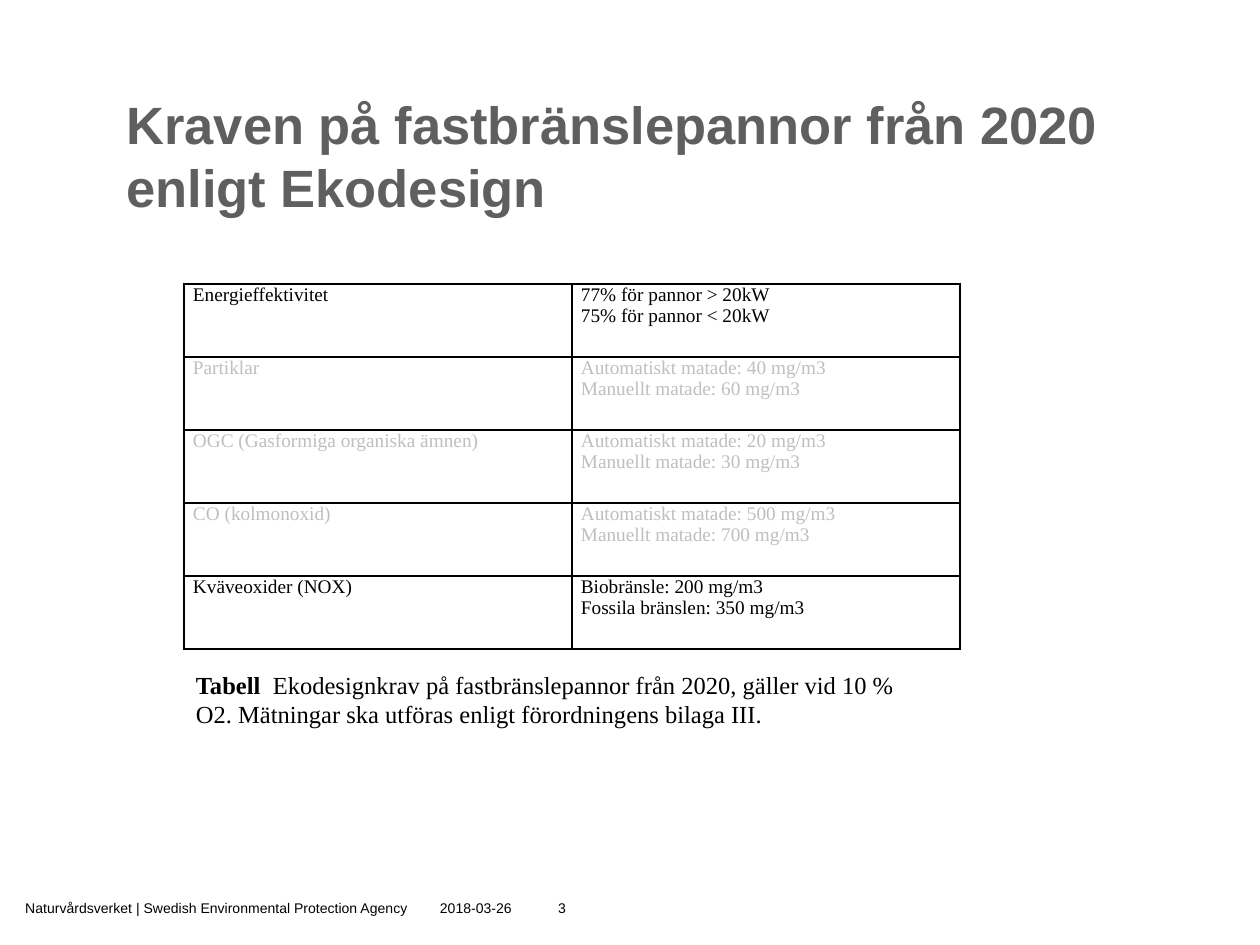
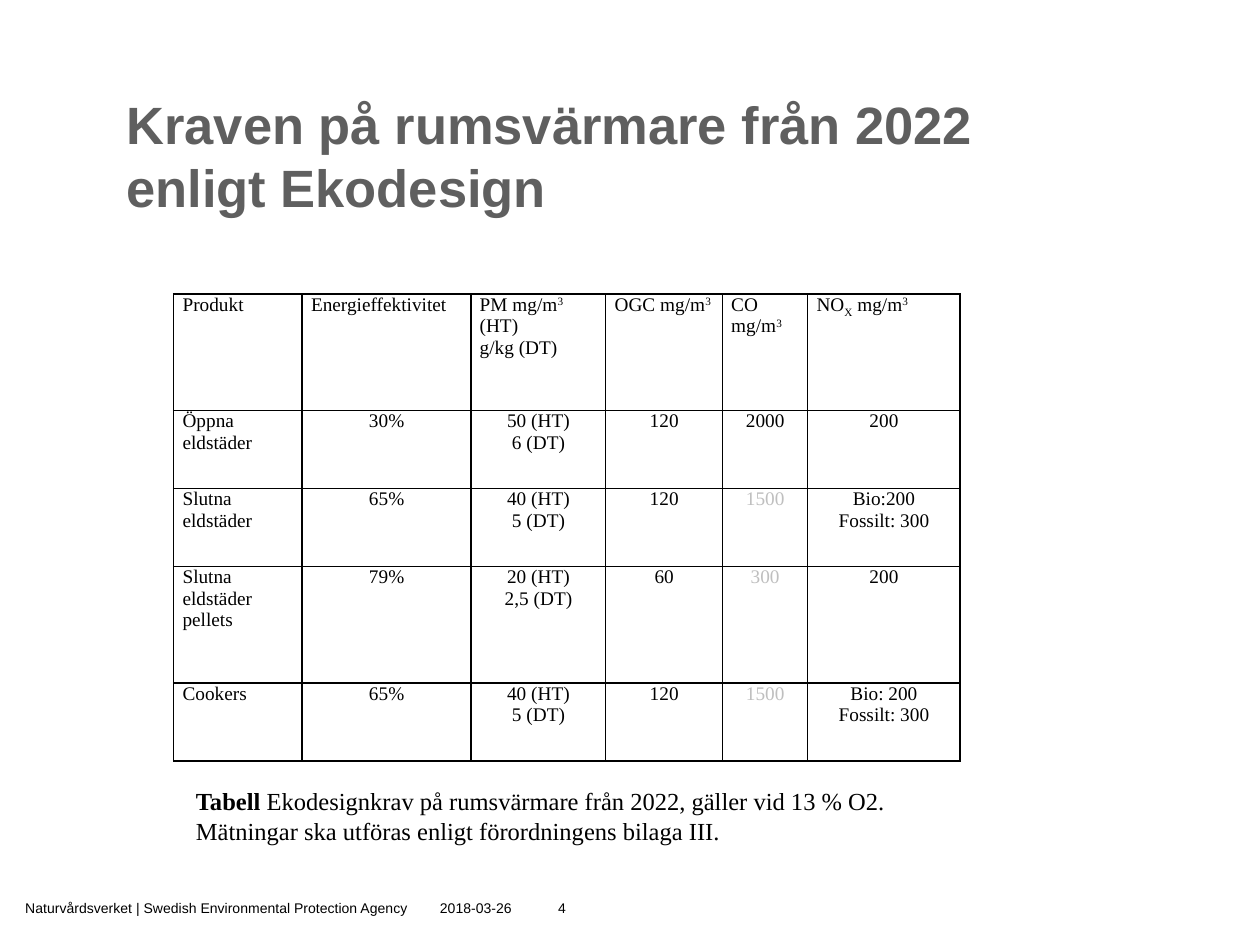
from lxml import etree
from pptx import Presentation
from pptx.dml.color import RGBColor
from pptx.enum.text import MSO_ANCHOR, PP_ALIGN
from pptx.oxml.ns import qn
from pptx.util import Cm, Pt

LEFT, CENTER, RIGHT = PP_ALIGN.LEFT, PP_ALIGN.CENTER, PP_ALIGN.RIGHT
TOP, MIDDLE = MSO_ANCHOR.TOP, MSO_ANCHOR.MIDDLE
BLANK_LAYOUT = 6
COLOURS = {"title": "5F5F5F", "text": "000000", "muted": "BFBFBF", "border": "000000"}
FORMATS = {
    "title": {"name": "Arial", "size": Pt(30), "bold": True},
    "footer": {"name": "Arial", "size": Pt(8), "bold": False},
    "caption": {"name": "Times New Roman", "size": Pt(14), "bold": False},
    "cell": {"name": "Times New Roman", "size": Pt(11), "bold": False},
}
BASELINES = {"^": "30000", "_": "-25000"}
BOLD_MARK = "*"
BORDER_SIDES = ("a:lnL", "a:lnR", "a:lnT", "a:lnB")
CELL_MARGINS = {"margin_left": Cm(0.18), "margin_right": Cm(0.17), "margin_top": 0, "margin_bottom": 0}

TITLE_BOX = (2.3, 1.73, 20.4, 3.4)
FOOTER_BOX = (0.26, 17.94, 11.4, 0.71)
AGENCY = "Naturvårdsverket | Swedish Environmental Protection Agency"
DATE = "2018-03-26"

BOILER_ROWS = [
    ["Energieffektivitet", "77% för pannor > 20kW\v75% för pannor < 20kW"],
    ["Partiklar", "Automatiskt matade: 40 mg/m3\vManuellt matade: 60 mg/m3"],
    ["OGC (Gasformiga organiska ämnen)", "Automatiskt matade: 20 mg/m3\vManuellt matade: 30 mg/m3"],
    ["CO (kolmonoxid)", "Automatiskt matade: 500 mg/m3\vManuellt matade: 700 mg/m3"],
    ["Kväveoxider (NOX)", "Biobränsle: 200 mg/m3\vFossila bränslen: 350 mg/m3"],
]
HEATER_ROWS = [
    ["Produkt", "Energieffektivitet", "PM mg/m~^3~ (HT)\vg/kg (DT)", "OGC mg/m~^3",
     "CO mg/m~^3", "NO~_X~ mg/m~^3"],
    ["Öppna eldstäder", "30%", "50 (HT)\v6 (DT)", "120", "2000", "200"],
    ["Slutna eldstäder", "65%", "40 (HT)\v5 (DT)", "120", "1500", "Bio:200\nFossilt: 300"],
    ["Slutna eldstäder pellets", "79%", "20 (HT)\v2,5 (DT)", "60", "300", "200"],
    ["Cookers", "65%", "40 (HT)\v5 (DT)", "120", "1500", "Bio: 200\vFossilt: 300"],
]
SLIDES = [
    {
        "title": "Kraven på fastbränslepannor från 2020 enligt Ekodesign",
        "number": "3",
        "table": {
            "rows": BOILER_ROWS, "origin": (3.71, 5.73),
            "widths": [7.82] * 2, "heights": [1.47] * 5,
            "muted": {(row, column) for row in (1, 2, 3) for column in (0, 1)},
            "centred": False, "space_after": Pt(14.5),
        },
        "caption": "*Tabell ~ Ekodesignkrav på fastbränslepannor från 2020, gäller vid 10 % O2. "
                   "Mätningar ska utföras enligt förordningens bilaga III.",
        "caption_box": (3.7, 13.38, 15.34, 1.45),
    },
    {
        "title": "Kraven på rumsvärmare från 2022 enligt Ekodesign",
        "number": "4",
        "table": {
            "rows": HEATER_ROWS, "origin": (3.5, 5.93),
            "widths": [2.59, 3.4, 2.72, 2.35, 1.72, 3.07],
            "heights": [2.35, 1.57, 1.57, 2.35, 1.57],
            "muted": {(row, 4) for row in (2, 3, 4)},
            "centred": True, "space_after": Pt(0),
        },
        "caption": "*Tabell ~Ekodesignkrav på rumsvärmare från 2022, gäller vid 13 % O2. "
                   "Mätningar ska utföras enligt förordningens bilaga III.",
        "caption_box": (3.7, 15.73, 15.34, 1.45),
    },
]


def add_run(paragraph, text, style, colour):
    """Add one formatted run; a leading mark makes it raised, lowered or bold."""
    mark = text[:1]
    marked = mark in BASELINES or mark == BOLD_MARK
    run = paragraph.add_run()
    run.text = text[1:] if marked else text
    for attribute, value in FORMATS[style].items():
        setattr(run.font, attribute, value)
    run.font.color.rgb = RGBColor.from_string(COLOURS[colour])
    if mark in BASELINES:
        run._r.get_or_add_rPr().set("baseline", BASELINES[mark])
    elif marked:
        run.font.bold = True


def write_text(frame, text, style, colour="text", **paragraph_format):
    """Write paragraphs split at newlines, lines at vertical tabs and runs at tildes."""
    for index, block in enumerate(text.split("\n")):
        paragraph = frame.add_paragraph() if index else frame.paragraphs[0]
        for attribute, value in paragraph_format.items():
            setattr(paragraph, attribute, value)
        for line_index, line in enumerate(block.split("\v")):
            if line_index:
                paragraph.add_line_break()
            for piece in line.split("~"):
                add_run(paragraph, piece, style, colour)


def add_text_box(slide, box, text, style, colour="text", anchor=TOP, **paragraph_format):
    """Add a wrapping text box."""
    frame = slide.shapes.add_textbox(*map(Cm, box)).text_frame
    frame.word_wrap = True
    frame.vertical_anchor = anchor
    write_text(frame, text, style, colour, **paragraph_format)


def add_footer(slide, box, number):
    """Add agency, date and slide number along the footer box."""
    left, top, width, height = box
    parts = [(0, 8.43, AGENCY, LEFT), (8.36, 2.08, DATE, LEFT), (width - 0.99, 0.99, number, RIGHT)]
    for offset, part_width, text, alignment in parts:
        add_text_box(slide, (left + offset, top, part_width, height), text, "footer",
                     anchor=MIDDLE, alignment=alignment)


def style_cell(cell):
    """Give a cell thin borders, narrow margins and no fill."""
    properties = cell._tc.get_or_add_tcPr()
    for side in BORDER_SIDES:
        line = etree.SubElement(properties, qn(side), w=str(Pt(1)))
        fill = etree.SubElement(line, qn("a:solidFill"))
        etree.SubElement(fill, qn("a:srgbClr"), val=COLOURS["border"])
    cell.fill.background()
    for attribute, value in CELL_MARGINS.items():
        setattr(cell, attribute, value)


def add_requirements_table(slide, rows, origin, widths, heights, muted, centred, space_after):
    """Add the table of limits, with values outside the focus muted."""
    box = (*origin, sum(widths), sum(heights))
    table = slide.shapes.add_table(len(rows), len(widths), *map(Cm, box)).table
    table.first_row = table.horz_banding = False
    for column, width in zip(table.columns, widths):
        column.width = Cm(width)
    for row_index, (row, height) in enumerate(zip(rows, heights)):
        table.rows[row_index].height = Cm(height)
        for column_index, text in enumerate(row):
            cell = table.cell(row_index, column_index)
            style_cell(cell)
            colour = "muted" if (row_index, column_index) in muted else "text"
            alignment = CENTER if centred and row_index and column_index else LEFT
            write_text(cell.text_frame, text, "cell", colour,
                       alignment=alignment, space_after=space_after)


def build_slide(presentation, content):
    """Build one slide with title, table, footer and caption."""
    slide = presentation.slides.add_slide(presentation.slide_layouts[BLANK_LAYOUT])
    add_text_box(slide, TITLE_BOX, content["title"], "title", "title")
    add_requirements_table(slide, **content["table"])
    add_footer(slide, FOOTER_BOX, content["number"])
    add_text_box(slide, content["caption_box"], content["caption"], "caption")


def main():
    """Build and save the presentation."""
    presentation = Presentation()
    presentation.slide_width, presentation.slide_height = Cm(25.4), Cm(19.05)
    for content in SLIDES:
        build_slide(presentation, content)
    presentation.save("out.pptx")


if __name__ == "__main__":
    main()
